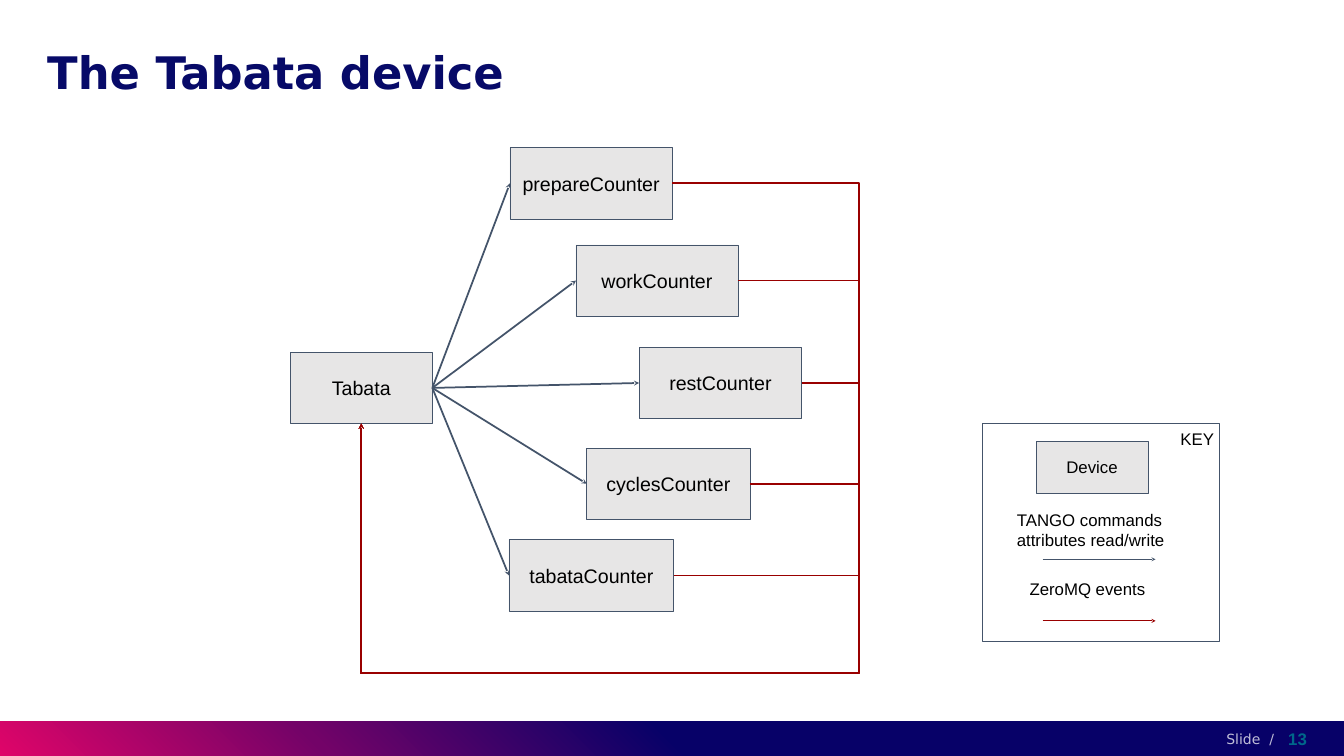
"""Builds a slide showing how the Tabata device talks to its counters."""
from lxml.etree import SubElement
from pptx import Presentation
from pptx.dml.color import RGBColor
from pptx.enum.shapes import MSO_CONNECTOR as Connector, MSO_SHAPE as Shape
from pptx.enum.text import MSO_ANCHOR as Anchor, MSO_AUTO_SIZE as AutoSize, PP_ALIGN as Align
from pptx.oxml import parse_xml
from pptx.oxml.ns import nsdecls, qn
from pptx.util import Cm, Pt

COLORS = {
    "title": "070A68", "box": "E7E6E6", "command": "44546A", "event": "990000",
    "text": "000000", "white": "FFFFFF", "number": "00688A",
    "navy": "070168", "purple": "730368", "pink": "DF0569",
}
WIDTH, HEIGHT = 67.74, 38.1
BOX_HEIGHT = 3.6
RAIL_X, RAIL_Y = 43.28, 33.93
LEFT, BOTTOM, RIGHT = 1, 2, 3
COUNTERS = [
    ("prepareCounter", 25.7, 7.44, 8.18),
    ("workCounter", 29.03, 12.34, 8.16),
    ("restCounter", 32.21, 17.5, 8.2),
    ("cyclesCounter", 29.57, 22.58, 8.23),
    ("tabataCounter", 25.65, 27.2, 8.31),
]


def color(name):
    return RGBColor.from_string(COLORS[name])


def set_alpha(fill, percent):
    SubElement(fill.find(".//" + qn("a:srgbClr")), qn("a:alpha"), val=str(percent * 1000))


def write(frame, text, size, tint="text", font="Arial", align=Align.LEFT,
          anchor=Anchor.TOP, inset=0.25, bold=False):
    frame.word_wrap = True
    frame.vertical_anchor = anchor
    frame.margin_left = frame.margin_right = Cm(0.25)
    frame.margin_top = frame.margin_bottom = Cm(inset)
    frame.text = text
    for paragraph in frame.paragraphs:
        paragraph.alignment = align
        paragraph.font.name = font
        paragraph.font.size = Pt(size)
        paragraph.font.bold = bold
        paragraph.font.color.rgb = color(tint)


def add_text(shapes, text, box, size, **style):
    shape = shapes.add_textbox(*map(Cm, box))
    write(shape.text_frame, text, size, **style)
    return shape


def add_box(shapes, box, text="", size=28):
    shape = shapes.add_shape(Shape.RECTANGLE, *map(Cm, box))
    shape.shadow.inherit = False
    shape.line.color.rgb = color("command")
    shape.line.width = Pt(0.75)
    if text:
        shape.fill.solid()
        shape.fill.fore_color.rgb = color("box")
        write(shape.text_frame, text, size, align=Align.CENTER, anchor=Anchor.MIDDLE)
    else:
        shape.fill.background()
    return shape


def add_line(shapes, tint, width, ends=(0, 0, 0, 0), kind=Connector.STRAIGHT, arrow=True):
    line = shapes.add_connector(kind, *map(Cm, ends))
    line.line.color.rgb = color(tint)
    line.line.width = Pt(width)
    if arrow:
        SubElement(line.line._get_or_add_ln(), qn("a:tailEnd"), type="stealth")
    SubElement(line._element.spPr, qn("a:effectLst"))
    return line


def add_command(shapes, source, target):
    line = add_line(shapes, "command", 2.5)
    line.begin_connect(source, RIGHT)
    line.end_connect(target, LEFT)


def add_event(shapes, source, target):
    """Route an event line right to the rail, down, and back up into the target."""
    line = add_line(shapes, "event", 2.5, kind=Connector.ELBOW)
    line.begin_connect(source, RIGHT)
    line.end_connect(target, BOTTOM)
    bends = (
        (Cm(RAIL_X) - line.begin_x) / (line.end_x - line.begin_x),
        (Cm(RAIL_Y) - line.begin_y) / (line.end_y - line.begin_y),
    )
    geometry = line._element.spPr.find(qn("a:prstGeom"))
    geometry.set("prst", "bentConnector4")
    guides = geometry.find(qn("a:avLst"))
    if guides is None:
        guides = SubElement(geometry, qn("a:avLst"))
    for index, bend in enumerate(bends, 1):
        SubElement(guides, qn("a:gd"), name=f"adj{index}", fmla=f"val {round(bend * 100000)}")


def add_footer(shapes):
    band = shapes.add_shape(Shape.RECTANGLE, 0, Cm(36.35), Cm(WIDTH), Cm(1.75))
    band.shadow.inherit = False
    band.line.fill.background()
    stops = "".join(
        f'<a:gs pos="{position}000"><a:srgbClr val="{COLORS[name]}"/></a:gs>'
        for position, name in ((50, "navy"), (76, "purple"), (100, "pink")))
    band._element.spPr.find(qn("a:prstGeom")).addnext(parse_xml(
        f'<a:gradFill {nsdecls("a")}><a:gsLst>{stops}</a:gsLst>'
        '<a:lin ang="8100000" scaled="0"/></a:gradFill>'))
    rule = add_line(shapes, "white", 1, (4.52, 36.3, WIDTH, 36.3), arrow=False)
    set_alpha(rule.line._get_or_add_ln(), 50)
    label = add_text(shapes, "Slide  /", (57.28, 36.68, 7.09, 1.12), 20, tint="white",
                     font="DejaVu Sans", align=Align.RIGHT, anchor=Anchor.MIDDLE, inset=0.15)
    label.text_frame.margin_left = label.text_frame.margin_right = Cm(0.15)
    set_alpha(label.text_frame.paragraphs[0]._p, 75)
    add_text(shapes, "13", (62.74, 36.2, 3.38, 2.03), 24, tint="number", bold=True,
             align=Align.RIGHT, anchor=Anchor.MIDDLE, inset=0.13)


def add_title(title, text):
    title.left, title.top, title.width, title.height = map(Cm, (2.13, 1.9, 63.5, 3.78))
    write(title.text_frame, text, 64, tint="title", font="DejaVu Sans",
          anchor=Anchor.MIDDLE, inset=0.13, bold=True)
    title.text_frame.auto_size = AutoSize.NONE
    title.text_frame.paragraphs[0].line_spacing = 0.9


def add_key(shapes):
    key = shapes.add_group_shape().shapes
    add_box(key, (49.53, 21.34, 11.91, 10.97))
    add_box(key, (52.22, 22.25, 5.64, 2.59), "Device", 24)
    add_text(key, "KEY", (58.24, 21.34, 3.2, 1.27), 24, align=Align.RIGHT)
    add_text(key, "TANGO commands\nattributes read/write", (51, 25.43, 8.94, 2.13), 24)
    add_text(key, "ZeroMQ events", (51.64, 28.91, 7.95, 1.27), 24)
    for tint, y in (("command", 28.19), ("event", 31.29)):
        add_line(key, tint, 1.5, (52.55, y, 58.24, y))


def main():
    presentation = Presentation()
    presentation.slide_width, presentation.slide_height = Cm(WIDTH), Cm(HEIGHT)
    slide = presentation.slides.add_slide(presentation.slide_layouts[5])
    shapes = slide.shapes
    add_footer(shapes)
    add_title(shapes.title, "The Tabata device")
    add_key(shapes)
    tabata = add_box(shapes, (14.63, 17.75, 7.16, BOX_HEIGHT), "Tabata")
    counters = [add_box(shapes, (left, top, width, BOX_HEIGHT), name)
                for name, left, top, width in COUNTERS]
    for counter in counters:
        add_command(shapes, tabata, counter)
    for counter in reversed(counters):
        add_event(shapes, counter, tabata)
    presentation.save("out.pptx")


if __name__ == "__main__":
    main()
